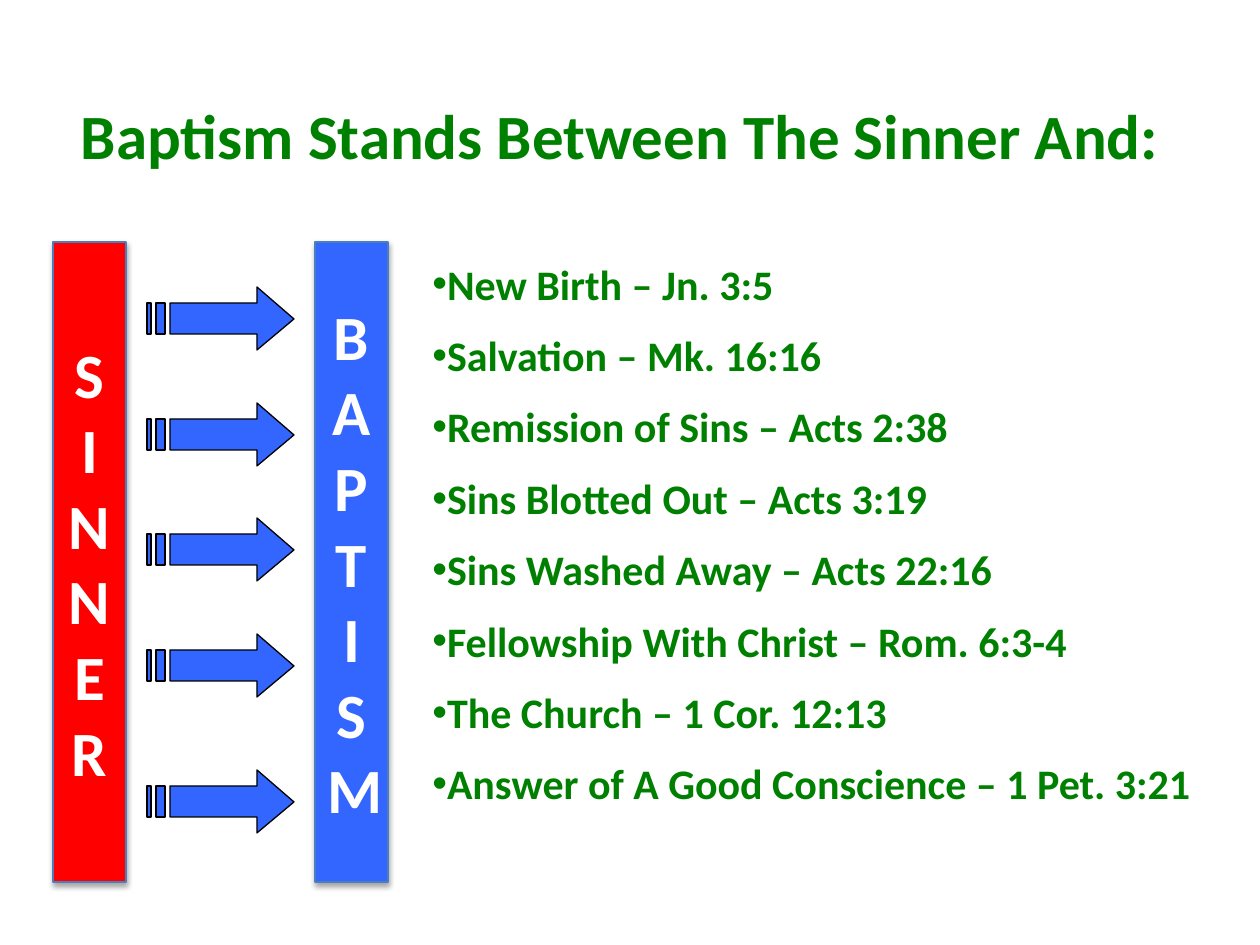
from pptx import Presentation
from pptx.dml.color import RGBColor
from pptx.enum.shapes import MSO_SHAPE as Kind
from pptx.enum.text import MSO_ANCHOR as Anchor, PP_ALIGN as Align
from pptx.oxml import parse_xml
from pptx.oxml.ns import nsdecls
from pptx.util import Pt

PX = 914400 / 126
GREEN, BLUE, RED, WHITE = "008000", "3366FF", "FF0000", "FFFFFF"
TITLE = "Baptism Stands Between The Sinner And:"
GAINS = [
    "New Birth – Jn. 3:5",
    "Salvation – Mk. 16:16",
    "Remission of Sins – Acts 2:38",
    "Sins Blotted Out – Acts 3:19",
    "Sins Washed Away – Acts 22:16",
    "Fellowship With Christ – Rom. 6:3-4",
    "The Church – 1 Cor. 12:13",
    "Answer of A Good Conscience – 1 Pet. 3:21",
]
BARS = [("SINNER", 53, RED), ("BAPTISM", 315, BLUE)]
LEFT, TOPS = 147, (403, 518, 634, 770, 287)
ARROW = [
    [(110, 0), (110, 16), (23, 16), (23, 47), (110, 47), (110, 63), (147, 32)],
    [(9, 16), (9, 47), (18, 47), (18, 16)],
    [(0, 16), (0, 47), (4, 47), (4, 16)],
]
SHADOW = (
    f'<a:effectLst {nsdecls("a")}><a:outerShdw blurRad="40000" dist="23000" '
    'dir="5400000" rotWithShape="0"><a:srgbClr val="000000">'
    '<a:alpha val="35000"/></a:srgbClr></a:outerShdw></a:effectLst>'
)


def emu(*nums):
    return [round(n * PX) for n in nums]


def color(code):
    return RGBColor.from_string(code)


def paint(shape, fill, line):
    shape.shadow.inherit = False
    shape.fill.solid()
    shape.fill.fore_color.rgb = color(fill)
    shape.line.color.rgb = color(line)
    shape.line.width = Pt(0.75)


def write(shape, lines, size, ink, anchor, align, gap=0):
    frame = shape.text_frame
    frame.word_wrap = True
    frame.vertical_anchor = anchor
    font = {"name": "Calibri", "size": Pt(size), "bold": True}
    for i, line in enumerate(lines):
        para = frame.add_paragraph() if i else frame.paragraphs[0]
        para.alignment, para.space_before = align, Pt(gap)
        run = para.add_run()
        run.text = line
        for key, val in font.items():
            setattr(run.font, key, val)
        run.font.color.rgb = color(ink)
    return frame.paragraphs


def bullet(para):
    props = para._p.get_or_add_pPr()
    props.set("marL", "0")
    props.set("indent", "0")
    props.append(parse_xml(f'<a:buFont {nsdecls("a")} typeface="Arial"/>'))
    props.append(parse_xml(f'<a:buChar {nsdecls("a")} char="•"/>'))


def arrow(shapes, top):
    first, *rest = ARROW
    build = shapes.build_freeform(*first[0], scale=PX)
    build.add_line_segments(first[1:], close=True)
    for part in rest:
        build.move_to(*part[0])
        build.add_line_segments(part[1:], close=True)
    paint(build.convert_to_shape(*emu(LEFT, top)), BLUE, "000000")


def main():
    """Build the baptism slide."""
    deck = Presentation()
    deck.slide_width, deck.slide_height = emu(1260, 945)
    shapes = deck.slides.add_slide(deck.slide_layouts[6]).shapes
    title = shapes.add_textbox(*emu(53, 79, 1134, 110))
    write(title, [TITLE], 36, GREEN, Anchor.MIDDLE, Align.CENTER)
    for top in TOPS:
        arrow(shapes, top)
    body = shapes.add_textbox(*emu(420, 252, 798, 599))
    for para in write(body, GAINS, 24, GREEN, Anchor.TOP, Align.LEFT, 12):
        bullet(para)
    for word, left, fill in BARS:
        bar = shapes.add_shape(Kind.RECTANGLE, *emu(left, 242, 73, 640))
        paint(bar, fill, "4B7EBC")
        props = bar._element.spPr
        props.replace(props.find("{*}effectLst"), parse_xml(SHADOW))
        write(bar, word, 36, WHITE, Anchor.MIDDLE, Align.CENTER)
    deck.save("out.pptx")


if __name__ == "__main__":
    main()
